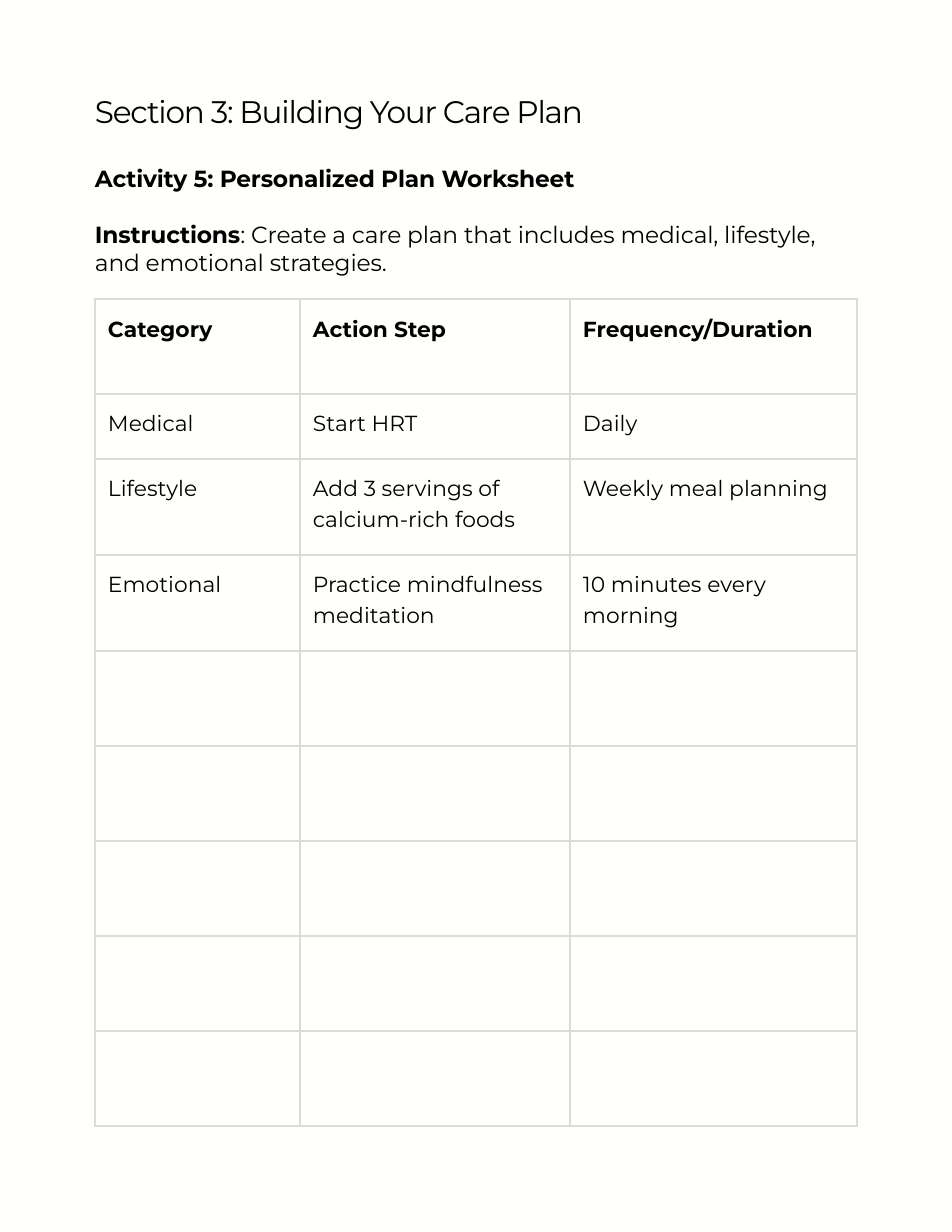
from lxml.etree import SubElement
from pptx import Presentation
from pptx.dml.color import RGBColor
from pptx.enum.text import MSO_ANCHOR
from pptx.oxml.ns import qn
from pptx.util import Pt

# Content
TITLE = [[("Section 3: Building Your Care Plan", False)]]
INTRO = [
    [("Activity 5: Personalized Plan Worksheet", True)],
    [("Instructions", True),
     (": Create a care plan that includes medical, lifestyle, "
      "and emotional strategies.", False)],
]
PLAN = [
    ("Category", "Action Step", "Frequency/Duration"),
    ("Medical", "Start HRT", "Daily"),
    ("Lifestyle", "Add 3 servings of calcium-rich foods", "Weekly meal planning"),
    ("Emotional", "Practice mindfulness meditation", "10 minutes every morning"),
]
BLANK = 5  # empty rows left to fill in

# Layout in px, 112 to the inch
PX = 914400 / 112
LEFT, WIDE = 95, 762
COLS = [205, 270, 287]
ROWS = [95, 65, 96, 96] + [95] * BLANK
INSET = 13

COLOR = {"page": "FFFFFC", "ink": "000000", "rule": "DBDBDB"}
FONT = "Montserrat"
HEAD = {"size": 20, "line": 18, "gap": 0, "track": -80}
BODY = {"size": 15, "line": 18, "gap": 18, "track": -10}
CELL = {"size": 14, "line": 19.6, "gap": 0, "track": 0}


def px(n):
    return round(n * PX)


def write(frame, paras, style, inset):
    frame.word_wrap = True
    for side in ("left", "top", "right", "bottom"):
        setattr(frame, "margin_" + side, px(inset))
    for i, runs in enumerate(paras):
        para = frame.add_paragraph() if i else frame.paragraphs[0]
        para.line_spacing = Pt(style["line"])
        para.space_before = Pt(style["gap"] if i else 0)
        for text, bold in runs:
            run = para.add_run()
            run.text = text
            look = {"name": FONT, "size": Pt(style["size"]), "bold": bold}
            for key, val in look.items():
                setattr(run.font, key, val)
            run.font.color.rgb = RGBColor.from_string(COLOR["ink"])
            run._r.get_or_add_rPr().set("spc", str(style["track"]))


def border(cell):
    props = cell._tc.get_or_add_tcPr()
    for side in "LRTB":
        line = SubElement(props, qn("a:ln" + side), w=str(Pt(1.5)))
        fill = SubElement(line, qn("a:solidFill"))
        SubElement(fill, qn("a:srgbClr"), val=COLOR["rule"])


deck = Presentation()
deck.slide_width, deck.slide_height = px(952), px(1232)
slide = deck.slides.add_slide(deck.slide_layouts[6])
slide.background.fill.solid()
slide.background.fill.fore_color.rgb = RGBColor.from_string(COLOR["page"])

# Title and instructions
for top, high, paras, style in [(102, 30, TITLE, HEAD), (164, 104, INTRO, BODY)]:
    box = slide.shapes.add_textbox(px(LEFT), px(top), px(WIDE), px(high))
    write(box.text_frame, paras, style, 0)

# Care plan table
grid = slide.shapes.add_table(len(ROWS), len(COLS), px(LEFT), px(299),
                              px(WIDE), px(sum(ROWS))).table
grid.first_row = grid.horz_banding = False
for col, wide in zip(grid.columns, COLS):
    col.width = px(wide)
for row, high in zip(grid.rows, ROWS):
    row.height = px(high)
for r in range(len(ROWS)):
    for c in range(len(COLS)):
        cell = grid.cell(r, c)
        border(cell)
        cell.fill.background()
        if r < len(PLAN):
            write(cell.text_frame, [[(PLAN[r][c], r == 0)]], CELL, INSET)
            for side in ("left", "top", "right", "bottom"):
                setattr(cell, "margin_" + side, px(INSET))
            cell.vertical_anchor = MSO_ANCHOR.TOP

deck.save("out.pptx")
